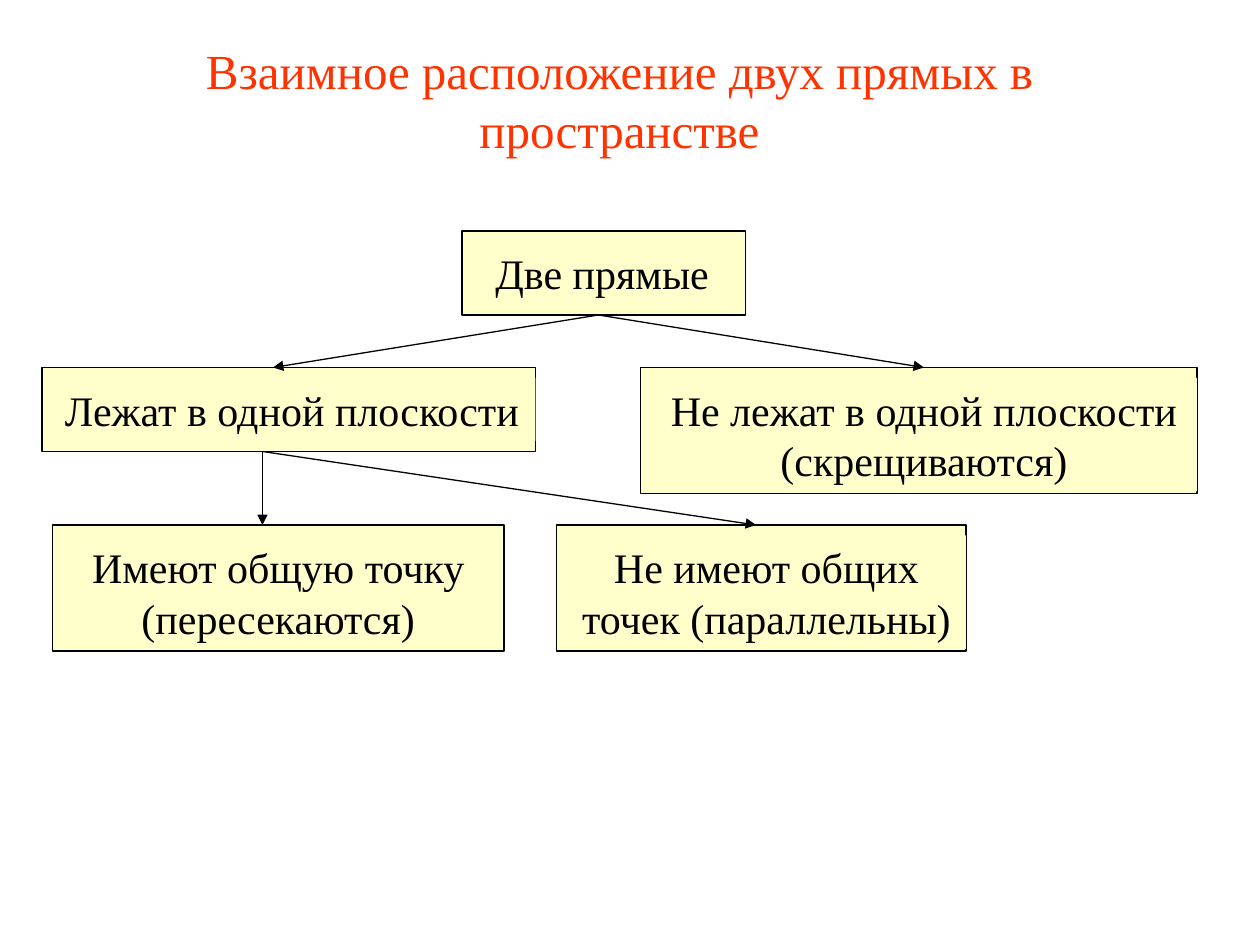
from dataclasses import dataclass

from lxml.etree import SubElement
from pptx import Presentation
from pptx.dml.color import RGBColor
from pptx.enum.shapes import MSO_CONNECTOR, MSO_SHAPE
from pptx.enum.text import MSO_ANCHOR, MSO_AUTO_SIZE, PP_ALIGN
from pptx.oxml.ns import qn
from pptx.util import Inches, Pt


@dataclass(frozen=True)
class Theme:
    font: str = "Times New Roman"
    title_size: int = 28
    label_size: int = 24
    line_width: float = 0.75
    title: RGBColor = RGBColor(0xFF, 0x33, 0x00)
    ink: RGBColor = RGBColor(0, 0, 0)
    box: RGBColor = RGBColor(0xFF, 0xFF, 0xCC)


@dataclass(frozen=True)
class Cells:
    """A rectangle in grid columns and rows."""
    col: float
    row: float
    cols: float
    rows: float

    def lengths(self) -> tuple:
        return tuple(map(cell, (self.col, self.row, self.cols, self.rows)))


@dataclass(frozen=True)
class Node:
    text: str
    frame: Cells
    pad_left: float = 1
    pad_right: float = 0
    align: PP_ALIGN = PP_ALIGN.CENTER

    @property
    def label(self) -> Cells:
        """The text area, one row below the top of the frame."""
        f = self.frame
        return Cells(f.col + self.pad_left, f.row + 1,
                     f.cols - self.pad_left - self.pad_right,
                     6 if f.rows == 8 else 10.8)


@dataclass(frozen=True)
class Arrow:
    start: tuple[float, float]
    end: tuple[float, float]


THEME = Theme()
COLS, ROWS = 120, 90
CELL = Inches(10) / COLS

TITLE = "Взаимное расположение двух прямых в пространстве"
TITLE_AREA = Cells(8, 2, 102, 15)
NODES = [
    Node("Две прямые", Cells(44, 22, 27, 8), 2, 2, PP_ALIGN.LEFT),
    Node("Лежат в одной плоскости", Cells(4, 35, 47, 8), align=PP_ALIGN.LEFT),
    Node("Не лежат в одной плоскости (скрещиваются)", Cells(61, 35, 53, 12)),
    Node("Имеют общую точку (пересекаются)", Cells(5, 50, 43, 12), 2, 2),
    Node("Не имеют общих точек (параллельны)", Cells(53, 50, 39, 12)),
]
ROOT_EXIT, PLANE_EXIT = (57, 30), (25, 43)
ARROWS = [
    Arrow(ROOT_EXIT, (26, 35)),
    Arrow(ROOT_EXIT, (88, 35)),
    Arrow(PLANE_EXIT, (25, 50)),
    Arrow(PLANE_EXIT, (72, 50)),
]


def cell(n: float) -> int:
    return round(n * CELL)


def apply(target, **values) -> None:
    for name, value in values.items():
        setattr(target, name, value)


def write(tf, text: str, size: int, color: RGBColor, **paragraph) -> None:
    p = tf.paragraphs[0]
    apply(p, **paragraph)
    r = p.add_run()
    r.text = text
    apply(r.font, name=THEME.font, size=Pt(size))
    r.font.color.rgb = color


def stroke(line) -> None:
    line.color.rgb = THEME.ink
    line.width = Pt(THEME.line_width)


def draw_title(slide) -> None:
    sp = slide.shapes.title
    apply(sp, **dict(zip(("left", "top", "width", "height"),
                         TITLE_AREA.lengths())))
    apply(sp.text_frame, vertical_anchor=MSO_ANCHOR.MIDDLE, word_wrap=True,
          auto_size=MSO_AUTO_SIZE.NONE)
    write(sp.text_frame, TITLE, THEME.title_size, THEME.title,
          alignment=PP_ALIGN.CENTER)


def draw_node(slide, node: Node) -> None:
    sp = slide.shapes.add_shape(MSO_SHAPE.RECTANGLE, *node.frame.lengths())
    sp.shadow.inherit = False
    stroke(sp.line)
    label = slide.shapes.add_textbox(*node.label.lengths())
    for part in (sp, label):
        part.fill.solid()
        part.fill.fore_color.rgb = THEME.box
    apply(label.text_frame, word_wrap=True,
          auto_size=MSO_AUTO_SIZE.SHAPE_TO_FIT_TEXT)
    write(label.text_frame, node.text, THEME.label_size, THEME.ink,
          alignment=node.align, space_before=Pt(THEME.label_size / 2))


def draw_arrow(slide, arrow: Arrow) -> None:
    cxn = slide.shapes.add_connector(
        MSO_CONNECTOR.STRAIGHT, *map(cell, arrow.start + arrow.end))
    stroke(cxn.line)
    SubElement(cxn.line._get_or_add_ln(), qn("a:tailEnd"), type="triangle")
    SubElement(cxn._element.spPr, qn("a:effectLst"))


def main() -> None:
    prs = Presentation()
    apply(prs, slide_width=cell(COLS), slide_height=cell(ROWS))
    slide = prs.slides.add_slide(prs.slide_layouts[5])
    draw_title(slide)
    for node in NODES:
        draw_node(slide, node)
    for arrow in ARROWS:
        draw_arrow(slide, arrow)
    prs.save("out.pptx")


if __name__ == "__main__":
    main()
